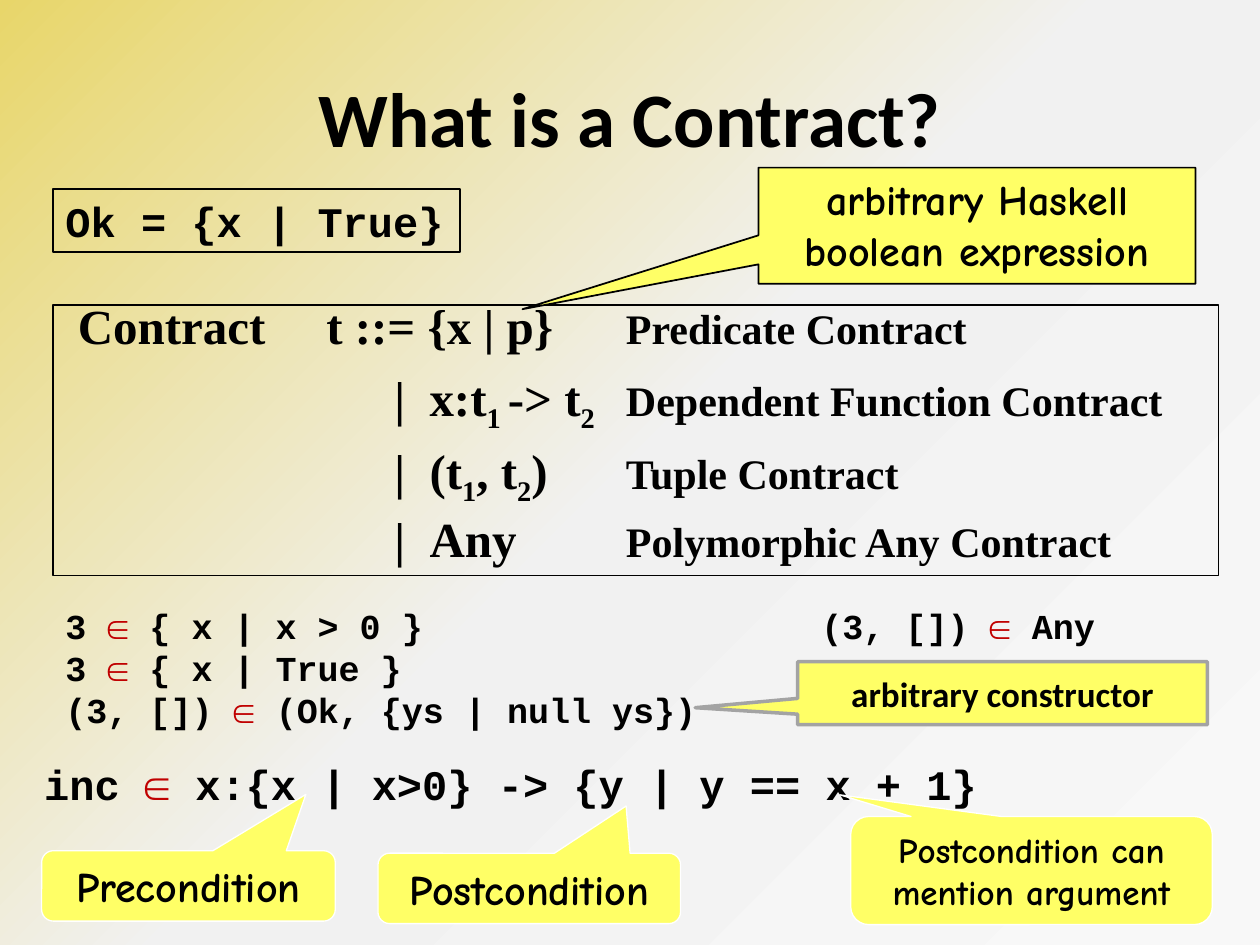
import copy
import pptx
import pptx.dml.color
import pptx.enum.shapes
import pptx.enum.text
import pptx.oxml
import pptx.oxml.ns
import pptx.util

Cm = pptx.util.Cm
Pt = pptx.util.Pt
RGB = pptx.dml.color.RGBColor
qn = pptx.oxml.ns.qn
Kind = pptx.enum.shapes.MSO_SHAPE
Align = pptx.enum.text.PP_ALIGN
Anchor = pptx.enum.text.MSO_ANCHOR

BLACK = RGB(0x00, 0x00, 0x00)
WHITE = RGB(0xFF, 0xFF, 0xFF)
RED = RGB(0xC0, 0x00, 0x00)
YELLOW = RGB(0xFF, 0xFF, 0x66)
GRAY = RGB(0xA3, 0xA3, 0xA3)
GOLD = RGB(0xE8, 0xD6, 0x6A)
PALE = RGB(0xF1, 0xF1, 0xF1)
LIGHT = RGB(0xF8, 0xF8, 0xF8)


def write(shape, lines, size, face, align=Align.LEFT, anchor=Anchor.TOP, wrap=True):
    frame = shape.text_frame
    frame.word_wrap = wrap
    frame.vertical_anchor = anchor
    for i, line in enumerate(lines):
        para = frame.add_paragraph() if i else frame.paragraphs[0]
        para.alignment = align
        para.font.size = Pt(size)
        para.font.name = face
        para.font.bold = True
        para.font.color.rgb = BLACK
        for j, part in enumerate(line.split("_")):
            run = para.add_run()
            run.text = part
            if part == "∈":
                run.font.color.rgb = RED
            elif j % 2:
                run.font._element.set("baseline", "-25000")
    return frame.paragraphs


def set_tabs(para, stops):
    tabs = pptx.oxml.parse_xml(
        '<a:tabLst xmlns:a="http://schemas.openxmlformats.org/drawingml/2006/main"/>')
    for stop in stops:
        tab = tabs.makeelement(qn("a:tab"), {"pos": str(Cm(stop)), "algn": "l"})
        tabs.append(tab)
    para.font._element.addprevious(tabs)


deck = pptx.Presentation()
deck.slide_width = Cm(25.4)
deck.slide_height = Cm(19.05)
slide = deck.slides.add_slide(deck.slide_layouts[6])
shapes = slide.shapes

back = slide.background.fill
back.gradient()
back.gradient_angle = 315
first = next(slide.element.iter(qn("a:gs")))
first.addnext(copy.deepcopy(first))
for stop, place, color in zip(back.gradient_stops, (0, 0.5, 1), (GOLD, PALE, LIGHT)):
    stop.position = place
    stop.color.rgb = color

title = shapes.add_textbox(Cm(1.27), Cm(0.76), Cm(22.86), Cm(3.18))
write(title, ["What is a Contract?"], 44, "Calibri", Align.CENTER, Anchor.MIDDLE)

frames = []
for top, wide, high, line in ((6.15, 23.5, 5.46, 0.75), (3.81, 8.2, 1.27, 1)):
    box = shapes.add_shape(Kind.RECTANGLE, Cm(1.07), Cm(top), Cm(wide), Cm(high))
    box.shadow.inherit = False
    box.fill.background()
    box.line.color.rgb = BLACK
    box.line.width = Pt(line)
    frames.append(box)
grammar, ok = frames

rules = (
    ("\tContract\tt ::= {x | p}", "Predicate Contract"),
    ("\t|\tx:t_1 _-> t_2_", "Dependent Function Contract"),
    ("\t|\t(t_1_, t_2_)", "Tuple Contract"),
    ("\t|\tAny", "Polymorphic Any Contract"),
)
paras = write(grammar, [rule for rule, name in rules], 28, "Times New Roman")
for i, (para, (rule, name)) in enumerate(zip(paras, rules)):
    para.line_spacing = 0.7
    para.space_before = Pt(15 if i else 0)
    set_tabs(para, (6.63, 7.34, 11.3) if i else (0.25, 5.26, 11.3))
    label = para.add_run()
    label.text = "\t" + name
    label.font.size = Pt(24)

write(ok, ["Ok = {x | True}"], 24, "Courier New", wrap=False)

facts = shapes.add_textbox(Cm(1.07), Cm(12.07), Cm(23.24), Cm(2.82))
paras = write(facts, [
    "3 _∈_ { x | x > 0 }\t(3, []) _∈_ Any",
    "3 _∈_ { x | True }",
    "(3, []) _∈_ (Ok, {ys | null ys})",
], 20, "Courier New")
set_tabs(paras[0], (15.24,))

inc = shapes.add_textbox(Cm(0.64), Cm(15.16), Cm(19.56), Cm(1.2))
write(inc, ["inc _∈_ x:{x | x>0} -> {y | y == x + 1}"], 24, "Courier New", wrap=False)

RECT = Kind.RECTANGULAR_CALLOUT
ROUND = Kind.ROUNDED_RECTANGULAR_CALLOUT
notes = (
    ("arbitrary Haskell boolean expression", RECT, (15.29, 3.38, 8.81, 2.34),
     (-1.04, 0.72), BLACK, 1, 24, "Comic Neue", Anchor.TOP),
    ("Precondition", ROUND, (0.84, 17.15, 5.92, 1.42),
     (0.4, -1.3), WHITE, 0.75, 24, "Comic Neue", Anchor.MIDDLE),
    ("Postcondition", ROUND, (7.62, 17.2, 6.1, 1.42),
     (0.32, -1.17), WHITE, 0.75, 24, "Comic Neue", Anchor.MIDDLE),
    ("Postcondition can mention argument", ROUND, (17.15, 16.46, 7.29, 2.18),
     (-0.53, -0.7), WHITE, 0.75, 20, "Comic Neue", Anchor.MIDDLE),
    ("arbitrary constructor", RECT, (16.08, 13.34, 8.26, 1.27),
     (-0.75, 0.23), GRAY, 2, 20, "Calibri", Anchor.MIDDLE),
)
for text, kind, spot, tip, edge, line, size, face, anchor in notes:
    note = shapes.add_shape(kind, *map(Cm, spot))
    note.shadow.inherit = False
    note.adjustments[0], note.adjustments[1] = tip
    note.fill.solid()
    note.fill.fore_color.rgb = YELLOW
    note.line.color.rgb = edge
    note.line.width = Pt(line)
    write(note, [text], size, face, Align.CENTER, anchor)

deck.save("out.pptx")
